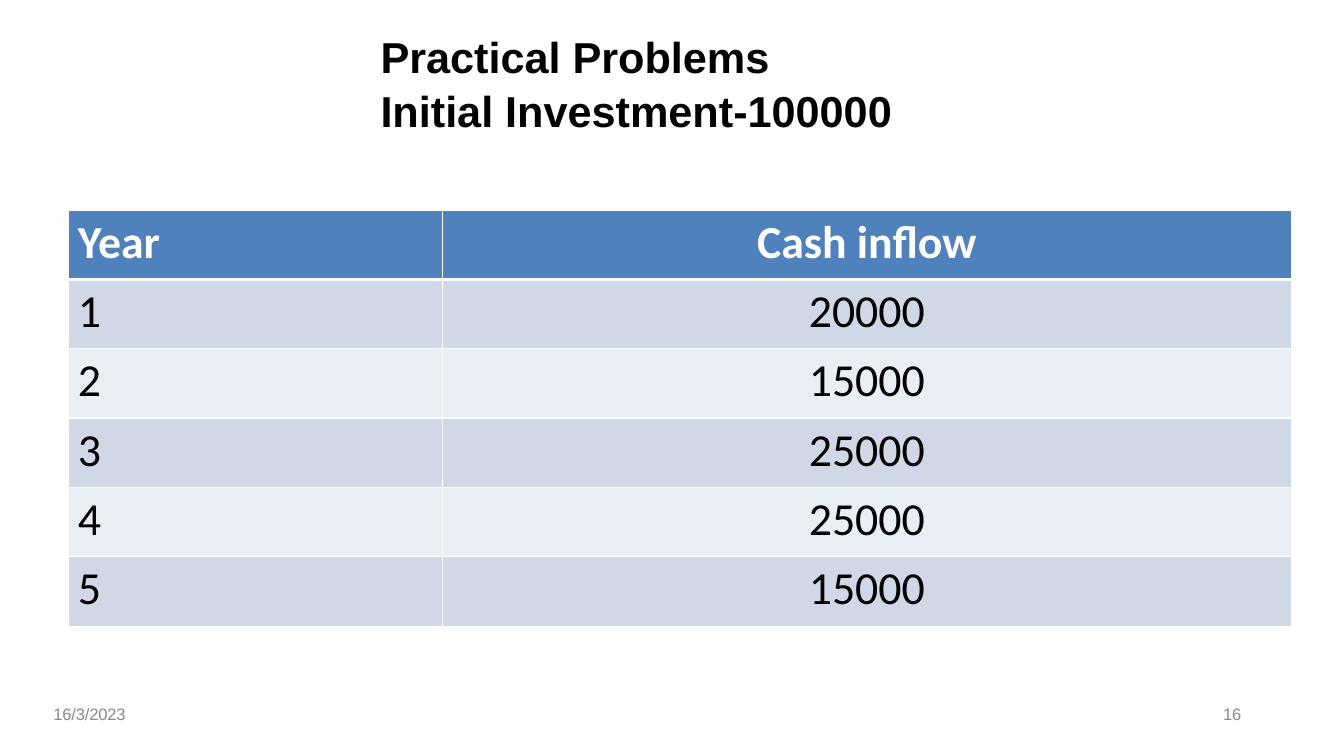
from lxml import etree
from pptx import Presentation
from pptx.dml.color import RGBColor
from pptx.enum import text
from pptx.oxml.ns import qn
from pptx.util import Pt

BLACK = RGBColor(0x00, 0x00, 0x00)
WHITE = RGBColor(0xFF, 0xFF, 0xFF)
GREY = RGBColor(0x88, 0x88, 0x88)
HEADER_BLUE = RGBColor(0x4F, 0x81, 0xBD)
BAND_COLORS = (RGBColor(0xE9, 0xED, 0xF4), RGBColor(0xD0, 0xD8, 0xE8))

TITLE_FONT = {"name": "Arial", "size": Pt(34), "bold": True}
FOOTER_FONT = {"name": "Arial", "size": Pt(13)}
HEADER_FONT = {"name": "Calibri", "size": Pt(36), "bold": True}
BODY_FONT = {"name": "Calibri", "size": Pt(36), "bold": False}

CASH_INFLOWS = [
    ("Year", "Cash inflow"),
    ("1", "20000"),
    ("2", "15000"),
    ("3", "25000"),
    ("4", "25000"),
    ("5", "15000"),
]
COLUMN_WIDTHS = (Pt(293.8), Pt(666.7))
COLUMN_ALIGNMENTS = (text.PP_ALIGN.LEFT, text.PP_ALIGN.CENTER)
ROW_HEIGHT = Pt(54.5)


def format_font(font, color, values):
    for name, value in values.items():
        setattr(font, name, value)
    font.color.rgb = color


def add_text(slide, box, lines, color, font_values, line_spacing):
    """Add a text box without insets, one paragraph per line."""
    frame = slide.shapes.add_textbox(*map(Pt, box)).text_frame
    frame.word_wrap = True
    for side in ("left", "top", "right", "bottom"):
        setattr(frame, f"margin_{side}", 0)
    frame.text = "\n".join(lines)
    for paragraph in frame.paragraphs:
        paragraph.line_spacing = line_spacing
        format_font(paragraph.runs[0].font, color, font_values)
    return frame


def add_footer(slide, box, content, indent):
    frame = add_text(slide, box, [content], GREY, FOOTER_FONT, Pt(15.3))
    paragraph = frame.paragraphs[0]
    paragraph._p.get_or_add_pPr().set("marL", str(Pt(indent)))
    paragraph.runs[0]._r.get_or_add_rPr().set("spc", "-10")


def set_borders(cell, bottom_width):
    """Draw white cell borders; they must precede the fill in the XML."""
    properties = cell._tc.get_or_add_tcPr()
    widths = {"a:lnL": 1, "a:lnR": 1, "a:lnT": 1, "a:lnB": bottom_width}
    for position, (tag, width) in enumerate(widths.items()):
        line = etree.Element(qn(tag), w=str(Pt(width)))
        fill = etree.SubElement(line, qn("a:solidFill"))
        etree.SubElement(fill, qn("a:srgbClr"), val=str(WHITE))
        properties.insert(position, line)


def fill_cell(cell, content, alignment, row_index):
    is_header = row_index == 0
    cell.fill.solid()
    cell.fill.fore_color.rgb = HEADER_BLUE if is_header else BAND_COLORS[row_index % 2]
    cell.text = content
    paragraph = cell.text_frame.paragraphs[0]
    paragraph.alignment = alignment
    format_font(paragraph.runs[0].font, WHITE if is_header else BLACK,
                HEADER_FONT if is_header else BODY_FONT)
    set_borders(cell, 3 if is_header else 1)


def add_cash_table(slide, left, top):
    row_count = len(CASH_INFLOWS)
    table = slide.shapes.add_table(
        row_count, len(COLUMN_WIDTHS), Pt(left), Pt(top),
        sum(COLUMN_WIDTHS), ROW_HEIGHT * row_count).table
    for column, width in zip(table.columns, COLUMN_WIDTHS):
        column.width = width
    for row_index, (row, contents) in enumerate(zip(table.rows, CASH_INFLOWS)):
        row.height = ROW_HEIGHT
        for cell, content, alignment in zip(row.cells, contents, COLUMN_ALIGNMENTS):
            fill_cell(cell, content, alignment, row_index)


def main():
    presentation = Presentation()
    presentation.slide_width = Pt(1056)
    presentation.slide_height = Pt(594)
    slide = presentation.slides.add_slide(presentation.slide_layouts[6])
    add_text(slide, (299, 21.6, 437, 82),
             ["Practical Problems", "Initial Investment-100000"],
             BLACK, TITLE_FONT, 1.05)
    add_cash_table(slide, 54, 165)
    add_footer(slide, (41, 553.7, 79, 15), "16/3/2023", 1)
    add_footer(slide, (952, 553.7, 25, 30), "16", 9)
    presentation.save("out.pptx")


if __name__ == "__main__":
    main()
